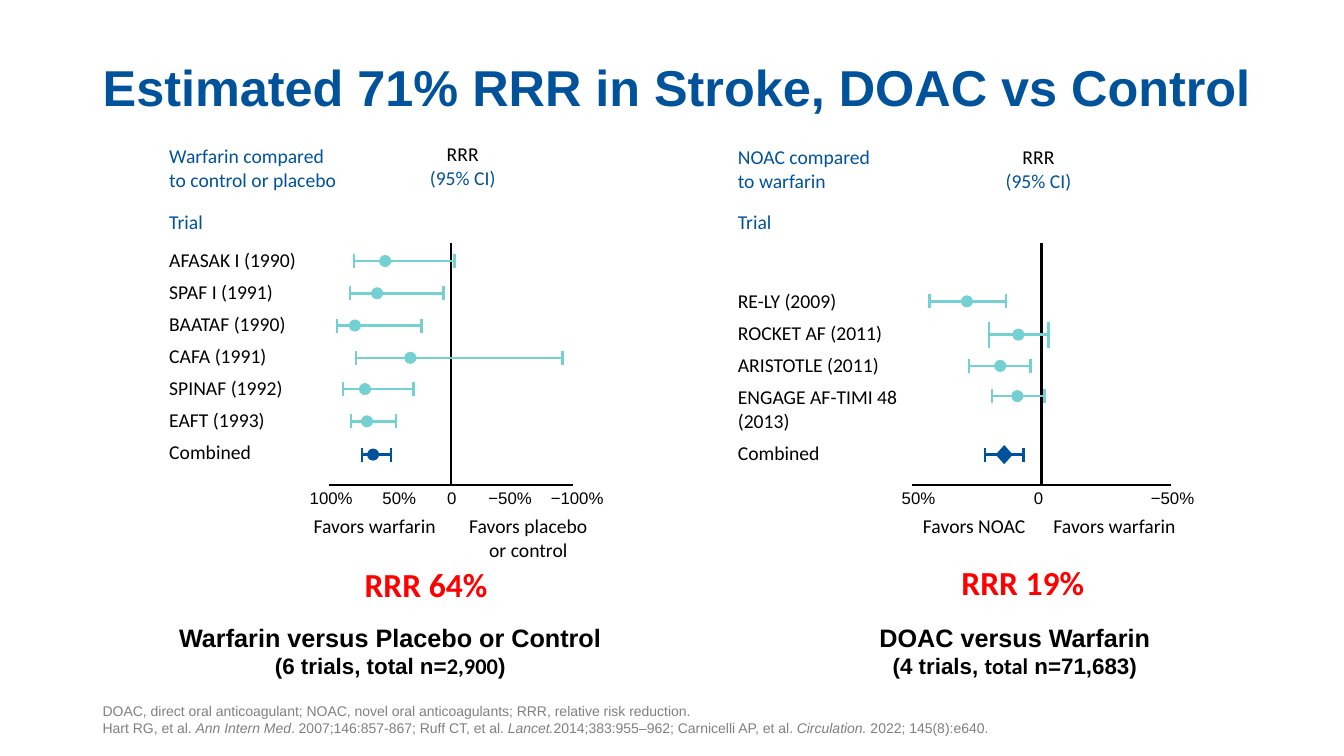
"""Build a slide with two forest plots of stroke risk reduction."""
from lxml import etree
from pptx import Presentation
from pptx import util as u
from pptx.dml import color
from pptx.enum import shapes, text

BLUE, TEAL, BLACK, RED, GRAY = "00539B", "75D1D1", "000000", "FF0000", "808080"
LEFT, MID, RIGHT = text.PP_ALIGN.LEFT, text.PP_ALIGN.CENTER, text.PP_ALIGN.RIGHT
TOP, LOW = text.MSO_ANCHOR.TOP, text.MSO_ANCHOR.BOTTOM
DOT, GEM = shapes.MSO_SHAPE.OVAL, shapes.MSO_SHAPE.DIAMOND
CAL, ITAL, BIG = {"font": "Calibri"}, {"ital": True}, {"size": 18}

TITLE = "Estimated 71% RRR in Stroke, DOAC vs Control"
NOTES = [
    ("DOAC, direct oral anticoagulant; NOAC, novel oral anticoagulants; "
     "RRR, relative risk reduction.\nHart RG, et al. ", {}),
    ("Ann Intern Med", ITAL),
    (". 2007;146:857-867; Ruff CT, et al. ", {}),
    ("Lancet.", ITAL),
    ("2014;383:955–962; Carnicelli AP, et al. ", {}),
    ("Circulation.", ITAL),
    (" 2022; 145(8):e640.", {}),
]

# Bars hold low end, high end, centre, height, half cap.
PLOTS = [
    {
        "x": 1.58, "head": "Warfarin compared\nto control or placebo",
        "wide": 1.88, "head_y": 1.38, "rrr": (4.16, 1.36, 0.86, 0.57),
        "rows": ["AFASAK I (1990)", "SPAF I (1991)", "BAATAF (1990)",
                 "CAFA (1991)", "SPINAF (1992)", "EAFT (1993)", "Combined"],
        "list": (1.58, 2.41, 1.48, 2.26),
        "zero": 4.47, "half": 1.21,
        "ticks": [("100%", 2.97, 0.63), ("50%", 3.69, 0.54), ("0", 4.33, 0.3),
                  ("−50%", 4.74, 0.64), ("−100%", 5.36, 0.73)],
        "sides": [("Favors warfarin", (2.98, 5.05, 1.44, 0.34), RIGHT),
                  ("Favors placebo\nor control", (4.54, 5.05, 1.4, 0.57), MID)],
        "bars": [(3.51, 4.51, 3.82, 2.59, 0.07), (3.47, 4.4, 3.74, 2.91, 0.07),
                 (3.34, 4.18, 3.52, 3.23, 0.07), (3.53, 5.58, 4.07, 3.55, 0.07),
                 (3.4, 4.1, 3.62, 3.86, 0.07), (3.48, 3.93, 3.64, 4.18, 0.07),
                 (3.59, 3.88, 3.7, 4.51, 0.07)],
        "mark": (DOT, 0.12, 0.12),
        "sum": ("RRR 64%", (2.1, 5.54, 4.25, 0.51)),
        "foot": (1.52, 6.12, 4.7, 0.67),
        "name": [[("Warfarin versus Placebo or Control", BIG)],
                 [("(6 trials, total n=", {}), ("2,900", CAL), (")", {})]],
    },
    {
        "x": 7.22, "head": "NOAC compared\nto warfarin",
        "wide": 1.57, "head_y": 1.39, "rrr": (9.87, 1.39, 0.86, 0.57),
        "rows": ["RE-LY (2009)", "ROCKET AF (2011)", "ARISTOTLE (2011)",
                 "ENGAGE AF-TIMI 48\n(2013)", "Combined"],
        "list": (7.22, 2.82, 1.84, 1.85),
        "zero": 10.33, "half": 1.28,
        "ticks": [("50%", 8.84, 0.54), ("0", 10.15, 0.3), ("−50%", 11.31, 0.64)],
        "sides": [("Favors NOAC", (9.03, 5.05, 1.24, 0.34), RIGHT),
                  ("Favors warfarin", (10.35, 5.05, 1.44, 0.34), LEFT)],
        "bars": [(9.22, 9.98, 9.59, 2.99, 0.07), (9.81, 10.4, 10.1, 3.32, 0.13),
                 (9.61, 10.22, 9.92, 3.63, 0.07), (9.84, 10.36, 10.09, 3.93, 0.07),
                 (9.77, 10.15, 9.96, 4.51, 0.07)],
        "mark": (GEM, 0.17, 0.19),
        "sum": ("RRR 19%", (8.02, 5.53, 4.25, 0.5)),
        "foot": (7.94, 6.12, 4.25, 0.67),
        "name": [[("DOAC versus Warfarin", BIG)],
                 [("(4 trials, ", {}), ("total", CAL), (" n=71,683)", {})]],
    },
]

deck = Presentation()
deck.slide_width, deck.slide_height = u.Inches(13.33), u.Inches(7.5)
slide = deck.slides.add_slide(deck.slide_layouts[6])


def hue(code):
    return color.RGBColor.from_string(code)


def write(box, paras, font="Calibri", size=14, ink=BLACK, side=LEFT,
          bold=False, wrap=False, gap=0, hold=TOP, lead=1.0):
    frame = slide.shapes.add_textbox(*map(u.Inches, box)).text_frame
    frame.word_wrap, frame.vertical_anchor = wrap, hold
    for n, runs in enumerate(paras):
        para = frame.add_paragraph() if n else frame.paragraphs[0]
        para.alignment, para.line_spacing = side, lead
        if n and gap:
            para.space_before = u.Pt(gap)
        for words, look in [(runs, {})] if isinstance(runs, str) else runs:
            for k, part in enumerate(words.split("\n")):
                if k:
                    para.add_line_break()
                run = para.add_run()
                run.text = part
                run.font.name = look.get("font", font)
                run.font.size = u.Pt(look.get("size", size))
                run.font.bold = bold
                run.font.italic = look.get("ital", False)
                run.font.color.rgb = hue(look.get("ink", ink))


def rule(x1, y1, x2, y2, ink, thick):
    line = slide.shapes.add_connector(
        shapes.MSO_CONNECTOR.STRAIGHT, *map(u.Inches, (x1, y1, x2, y2)))
    line.line.color.rgb, line.line.width = hue(ink), u.Pt(thick)
    props = line.line._get_or_add_ln().getparent()
    etree.SubElement(
        props, "{http://schemas.openxmlformats.org/drawingml/2006/main}effectLst")


def point(kind, x, y, w, h, ink):
    dot = slide.shapes.add_shape(
        kind, *map(u.Inches, (x - w / 2, y - h / 2, w, h)))
    dot.shadow.inherit = False
    dot.fill.solid()
    dot.fill.fore_color.rgb = hue(ink)
    dot.line.fill.background()


def draw(plot):
    x, zero, half = plot["x"], plot["zero"], plot["half"]
    write((x, plot["head_y"], plot["wide"], 0.57), [plot["head"]], ink=BLUE)
    write(plot["rrr"], ["RRR", [("(95% CI)", {"ink": BLUE})]], side=MID)
    write((x, 2.03, 0.55, 0.34), ["Trial"], ink=BLUE)
    write(plot["list"], plot["rows"], gap=6)
    for label, at, wide in plot["ticks"]:
        write((at, 4.79, wide, 0.3), [label], "Arial", 12, side=MID)
    for label, box, side in plot["sides"]:
        write(box, [label], side=side)
    rule(zero - half, 4.81, zero + half, 4.81, BLACK, 1.5)
    rule(zero, 2.41, zero, 4.81, BLACK, 1.5)
    for bar in plot["bars"]:
        low, high, mid, y, cap = bar
        last = bar is plot["bars"][-1]
        ink = BLUE if last else TEAL
        for end in (low, high):
            rule(end, y - cap, end, y + cap, ink, 1.75)
        rule(low, y, high, y, ink, 1.75)
        kind, w, h = plot["mark"] if last else (DOT, 0.12, 0.12)
        point(kind, mid, y, w, h, ink)
    label, box = plot["sum"]
    write(box, [label], size=24, ink=RED, side=MID, bold=True, wrap=True)
    write(plot["foot"], plot["name"], "Arial", 16, side=MID, bold=True, wrap=True)


write((0.92, 0, 12.08, 1.21), [TITLE], "Arial", 36, BLUE,
      bold=True, wrap=True, hold=LOW, lead=0.9)
for plot in PLOTS:
    draw(plot)
write((0.92, 6.95, 11.5, 0.4), [NOTES], "Arial", 10, GRAY, wrap=True, hold=LOW)
deck.save("out.pptx")
